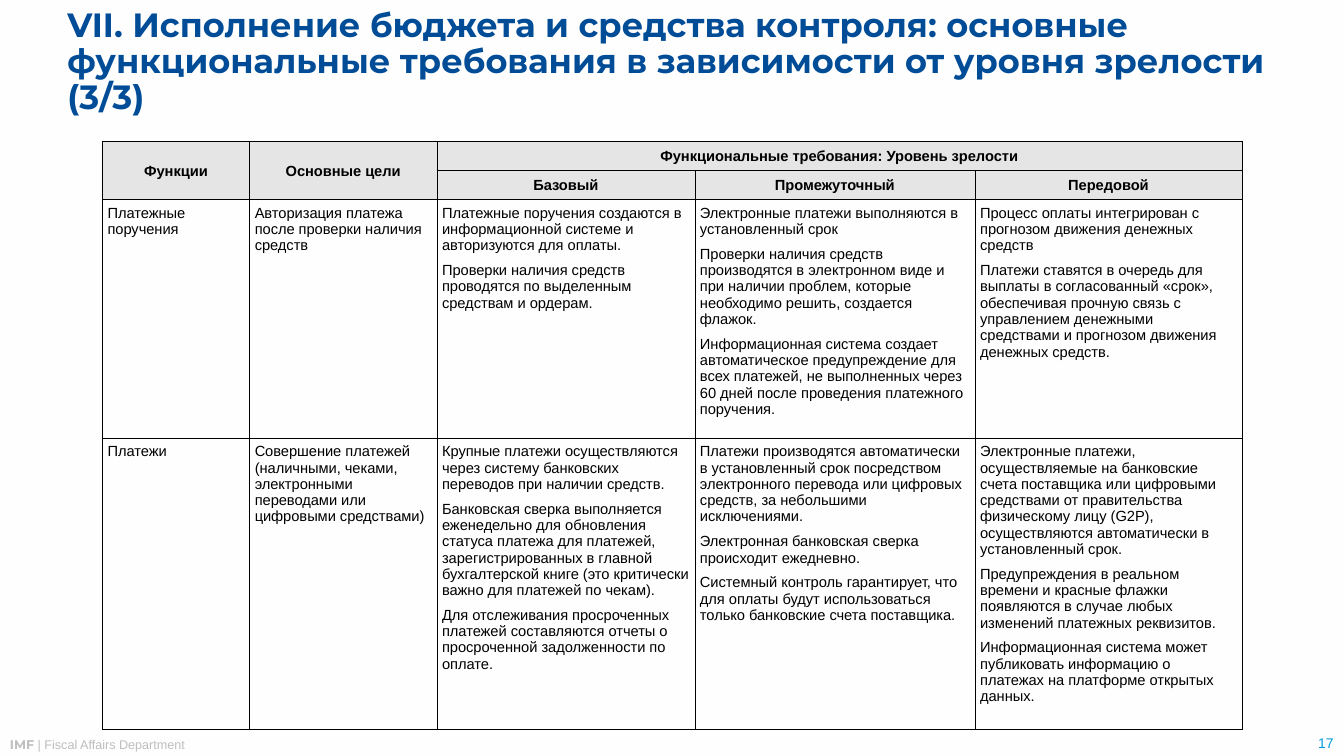
from dataclasses import dataclass

from lxml import etree
from pptx import Presentation
from pptx import util as u
from pptx.dml.color import RGBColor
from pptx.enum import text
from pptx.oxml import ns


@dataclass(frozen=True)
class Theme:
    heading_font: str = "Montserrat"
    body_font: str = "Arial"
    background: str = "FEFEFE"
    title: str = "004C97"
    ink: str = "000000"
    header_fill: str = "E5E5E5"
    footer: str = "BEBEBE"
    number: str = "009CDE"
    title_size: float = 24
    table_size: float = 10.5
    footer_size: float = 9
    number_size: float = 10


TITLE = (
    "VII. Исполнение бюджета и средства контроля: основные функциональные "
    "требования в зависимости от уровня зрелости (3/3)"
)
COLUMN_WIDTHS = [3.71, 4.72, 6.5, 7.06, 6.73]
ROW_HEIGHTS = [0.69, 0.69, 5.6, 6.86]
HEADERS = [
    ["Функции", "Основные цели", "Функциональные требования: Уровень зрелости", "", ""],
    ["", "", "Базовый", "Промежуточный", "Передовой"],
]
MERGES = [((0, 0), (1, 0)), ((0, 1), (1, 1)), ((0, 2), (0, 4))]
REQUIREMENTS = [
    [
        ["Платежные поручения"],
        ["Авторизация платежа после проверки наличия средств"],
        [
            "Платежные поручения создаются в информационной системе и авторизуются для оплаты.",
            "Проверки наличия средств проводятся по выделенным средствам и ордерам.",
        ],
        [
            "Электронные платежи выполняются в установленный срок",
            "Проверки наличия средств производятся в электронном виде и при наличии "
            "проблем, которые необходимо решить, создается флажок.",
            "Информационная система создает автоматическое предупреждение для всех "
            "платежей, не выполненных через 60 дней после проведения платежного поручения.",
        ],
        [
            "Процесс оплаты интегрирован с прогнозом движения денежных средств",
            "Платежи ставятся в очередь для выплаты в согласованный «срок», обеспечивая "
            "прочную связь с управлением денежными средствами и прогнозом движения "
            "денежных средств.",
        ],
    ],
    [
        ["Платежи"],
        [
            "Совершение платежей (наличными, чеками, электронными переводами или "
            "цифровыми средствами)"
        ],
        [
            "Крупные платежи осуществляются через систему банковских переводов при "
            "наличии средств.",
            "Банковская сверка выполняется еженедельно для обновления статуса платежа "
            "для платежей, зарегистрированных в главной бухгалтерской книге (это "
            "критически важно для платежей по чекам).",
            "Для отслеживания просроченных платежей составляются отчеты о просроченной "
            "задолженности по оплате.",
        ],
        [
            "Платежи производятся автоматически в установленный срок посредством "
            "электронного перевода или цифровых средств, за небольшими исключениями.",
            "Электронная банковская сверка происходит ежедневно.",
            "Системный контроль гарантирует, что для оплаты будут использоваться только "
            "банковские счета поставщика.",
        ],
        [
            "Электронные платежи, осуществляемые на банковские счета поставщика или "
            "цифровыми средствами от правительства физическому лицу (G2P), "
            "осуществляются автоматически в установленный срок.",
            "Предупреждения в реальном времени и красные флажки появляются в случае "
            "любых изменений платежных реквизитов.",
            "Информационная система может публиковать информацию о платежах на "
            "платформе открытых данных.",
        ],
    ],
]


class SlideBuilder:
    def __init__(self, presentation, theme):
        self.theme = theme
        self.slide = presentation.slides.add_slide(presentation.slide_layouts[6])
        background = self.slide.background.fill
        background.solid()
        background.fore_color.rgb = RGBColor.from_string(theme.background)

    def style(self, font, name, size, color, bold=False):
        font.name = name
        font.size = u.Pt(size)
        font.bold = bold
        font.color.rgb = RGBColor.from_string(color)

    def text_box(self, left, top, width, height, anchor=text.MSO_ANCHOR.TOP):
        shape = self.slide.shapes.add_textbox(*map(u.Cm, (left, top, width, height)))
        frame = shape.text_frame
        frame.word_wrap = True
        frame.vertical_anchor = anchor
        return frame

    def title(self, words):
        frame = self.text_box(1.7, 0.03, 30.48, 3.1, text.MSO_ANCHOR.MIDDLE)
        frame.margin_left = frame.margin_right = 0
        frame.margin_top = frame.margin_bottom = 0
        paragraph = frame.paragraphs[0]
        paragraph.text = words
        paragraph.line_spacing = 0.9
        theme = self.theme
        self.style(paragraph.font, theme.heading_font, theme.title_size, theme.title, True)

    def footer(self, organization, department):
        theme = self.theme
        paragraph = self.text_box(0, 18.44, 25.4, 0.64).paragraphs[0]
        for words, font_name, bold in [
            (organization, theme.heading_font, True),
            (department, theme.body_font, False),
        ]:
            run = paragraph.add_run()
            run.text = words
            self.style(run.font, font_name, theme.footer_size, theme.footer, bold)

    def page_number(self, number):
        theme = self.theme
        frame = self.text_box(30.5, 18.39, 3.36, 0.68, text.MSO_ANCHOR.BOTTOM)
        paragraph = frame.paragraphs[0]
        paragraph.text = str(number)
        paragraph.alignment = text.PP_ALIGN.RIGHT
        self.style(paragraph.font, theme.body_font, theme.number_size, theme.number)

    def borders(self, cell):
        properties = cell._tc.get_or_add_tcPr()
        for side in ("a:lnL", "a:lnR", "a:lnT", "a:lnB"):
            line = etree.SubElement(properties, ns.qn(side), w=str(u.Pt(0.5)))
            fill = etree.SubElement(line, ns.qn("a:solidFill"))
            etree.SubElement(fill, ns.qn("a:srgbClr"), val=self.theme.ink)

    def cell(self, cell, paragraphs, header):
        theme = self.theme
        cell.margin_left = cell.margin_right = u.Cm(0.13)
        cell.margin_top = cell.margin_bottom = u.Cm(0.13)
        self.borders(cell)
        if header:
            cell.fill.solid()
            cell.fill.fore_color.rgb = RGBColor.from_string(theme.header_fill)
            cell.vertical_anchor = text.MSO_ANCHOR.MIDDLE
        else:
            cell.fill.background()
        cell.text = "\n".join(paragraphs)
        for paragraph in cell.text_frame.paragraphs:
            paragraph.space_after = u.Pt(8 if header else 6)
            if header:
                paragraph.alignment = text.PP_ALIGN.CENTER
                paragraph.line_spacing = 1.07
            self.style(paragraph.font, theme.body_font, theme.table_size, theme.ink, header)

    def table(self, left, top):
        rows = [[[words] for words in row] for row in HEADERS] + REQUIREMENTS
        table = self.slide.shapes.add_table(
            len(rows), len(COLUMN_WIDTHS), u.Cm(left), u.Cm(top),
            u.Cm(sum(COLUMN_WIDTHS)), u.Cm(sum(ROW_HEIGHTS)),
        ).table
        table.first_row = table.horz_banding = False
        for column, width in zip(table.columns, COLUMN_WIDTHS):
            column.width = u.Cm(width)
        for row, height in zip(table.rows, ROW_HEIGHTS):
            row.height = u.Cm(height)
        for row_index, row in enumerate(rows):
            for column_index, paragraphs in enumerate(row):
                cell = table.cell(row_index, column_index)
                self.cell(cell, paragraphs, row_index < len(HEADERS))
        for first, last in MERGES:
            table.cell(*first).merge(table.cell(*last))


def main():
    presentation = Presentation()
    presentation.slide_width = u.Cm(33.87)
    presentation.slide_height = u.Cm(19.05)
    builder = SlideBuilder(presentation, Theme())
    builder.footer("IMF ", "| Fiscal Affairs Department")
    builder.page_number(17)
    builder.title(TITLE)
    builder.table(2.58, 3.56)
    presentation.save("out.pptx")


if __name__ == "__main__":
    main()
